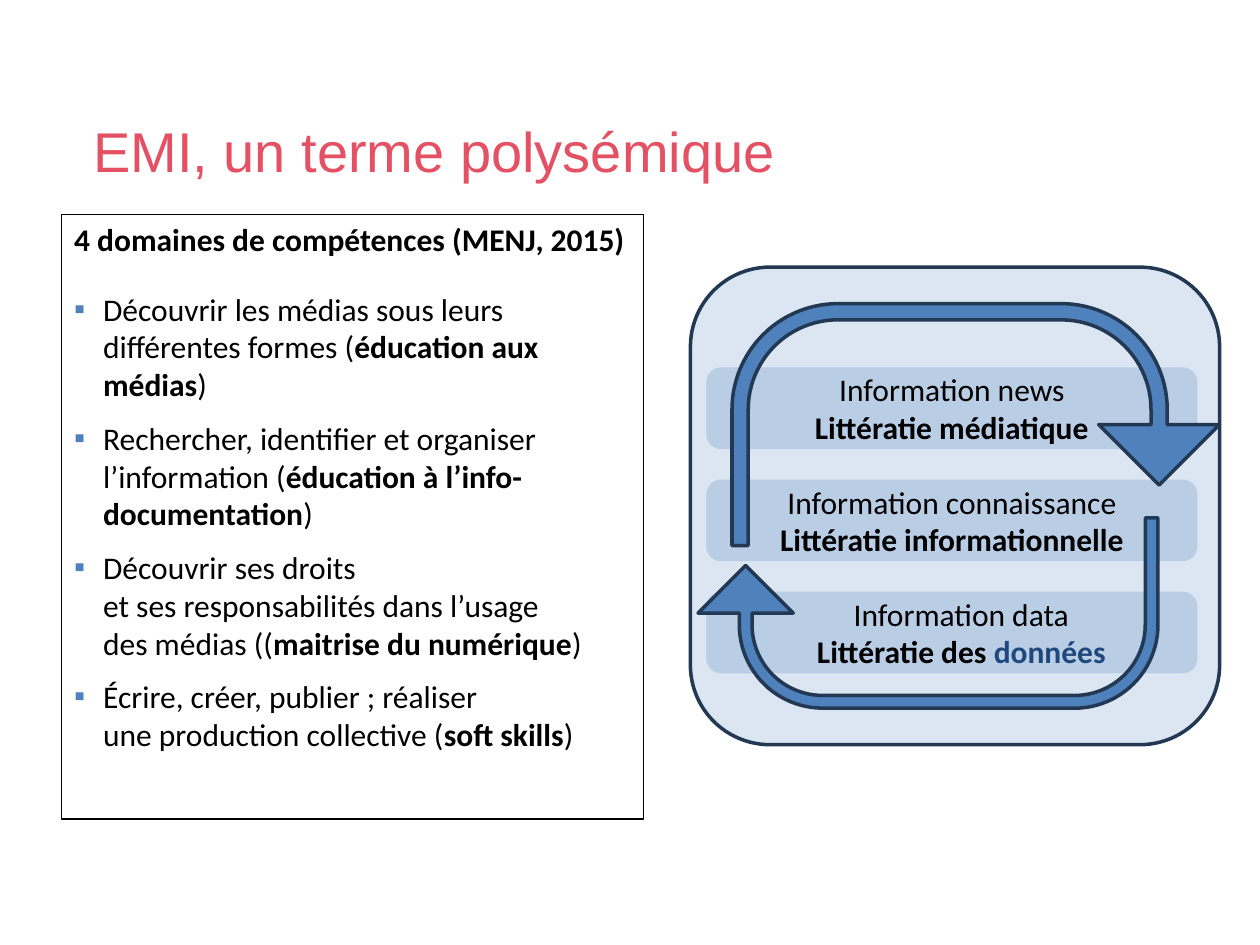
from dataclasses import dataclass

from lxml import etree
from pptx import Presentation
from pptx.dml.color import RGBColor
from pptx.enum import shapes, text
from pptx.oxml import ns
from pptx.util import Inches, Pt


@dataclass(frozen=True)
class Theme:
    title: str = "E45164"
    ink: str = "000000"
    paper: str = "FFFFFF"
    panel: str = "DCE6F2"
    band: str = "B9CDE5"
    accent: str = "4F81BD"
    outline: str = "233953"
    data: str = "1F497D"
    title_font: str = "Arial"
    body_font: str = "Calibri"
    title_size: int = 32
    body_size: int = 18


THEME = Theme()
SHAPE = shapes.MSO_SHAPE
ALIGN = text.PP_ALIGN
ANCHOR = text.MSO_ANCHOR

# A run is (text, bold) or (text, bold, colour); "\n" is a line break.
SKILLS = [
    [("Découvrir les médias sous leurs différentes formes (", False),
     ("éducation aux médias", True), (")", False)],
    [("Rechercher, identifier et organiser l’information (", False),
     ("éducation à l’info-documentation", True), (")", False)],
    [("Découvrir ses droits\net ses responsabilités dans l’usage\ndes médias ((", False),
     ("maitrise du numérique", True), (")", False)],
    [("Écrire, créer, publier ; réaliser\nune production collective (", False),
     ("soft skills", True), (")", False)],
]

# Each band: first line, runs of the second line, left indent
BANDS = [
    ("Information news", [("Littératie médiatique", True)], 0),
    ("Information connaissance", [("Littératie informationnelle", True)], 0),
    ("Information data",
     [("Littératie des ", True), ("données", True, THEME.data)], 0.15),
]


def add_box(slide, kind, left, top, width, height, fill, line, line_width):
    shape = slide.shapes.add_shape(
        kind, Inches(left), Inches(top), Inches(width), Inches(height))
    shape.shadow.inherit = False
    if fill:
        shape.fill.solid()
        shape.fill.fore_color.rgb = RGBColor.from_string(fill)
    else:
        shape.fill.background()
    shape.line.color.rgb = RGBColor.from_string(line)
    shape.line.width = Pt(line_width)
    return shape


def set_indent(paragraph, left, first=0):
    properties = paragraph._p.get_or_add_pPr()
    properties.set("marL", str(Inches(left)))
    properties.set("indent", str(Inches(first)))
    return properties


def add_bullet(paragraph):
    properties = set_indent(paragraph, 0.23, -0.23)
    colour = etree.SubElement(properties, ns.qn("a:buClr"))
    etree.SubElement(colour, ns.qn("a:srgbClr")).set("val", THEME.accent)
    etree.SubElement(properties, ns.qn("a:buFont")).set("typeface", "Arial")
    etree.SubElement(properties, ns.qn("a:buChar")).set("char", "▪")


def fill_paragraph(paragraph, runs, align=ALIGN.LEFT, font=THEME.body_font,
                   size=THEME.body_size, colour=THEME.ink):
    paragraph.alignment = align
    paragraph.font.name = font
    paragraph.font.size = Pt(size)
    paragraph.font.color.rgb = RGBColor.from_string(colour)
    for content, bold, *run_colour in runs:
        for index, line in enumerate(content.split("\n")):
            if index:
                paragraph.add_line_break()
            run = paragraph.add_run()
            run.text = line
            run.font.bold = bold
            if run_colour:
                run.font.color.rgb = RGBColor.from_string(run_colour[0])


def add_title(slide):
    shape = add_box(slide, SHAPE.RECTANGLE, 0.74, 0.82, 6.02, 0.75,
                    None, THEME.paper, 0.75)
    frame = shape.text_frame
    frame.word_wrap = True
    frame.vertical_anchor = ANCHOR.MIDDLE
    frame.margin_left = frame.margin_right = 0
    frame.margin_top = frame.margin_bottom = 0
    fill_paragraph(frame.paragraphs[0], [("EMI, un terme polysémique", False)],
                   font=THEME.title_font, size=THEME.title_size,
                   colour=THEME.title)


def add_skills(slide):
    shape = add_box(slide, SHAPE.RECTANGLE, 0.49, 1.7, 4.62, 4.8,
                    None, THEME.ink, 0.75)
    frame = shape.text_frame
    frame.word_wrap = True
    frame.vertical_anchor = ANCHOR.TOP
    heading = frame.paragraphs[0]
    heading.space_after = Pt(18)
    fill_paragraph(heading, [("4 domaines de compétences (MENJ, 2015)", True)])
    for runs in SKILLS:
        paragraph = frame.add_paragraph()
        paragraph.space_after = Pt(9)
        add_bullet(paragraph)
        fill_paragraph(paragraph, runs)


def add_band(slide, top, first_line, second_line, indent):
    shape = add_box(slide, SHAPE.ROUNDED_RECTANGLE, 5.62, top, 3.87, 0.62,
                    THEME.band, THEME.band, 2)
    frame = shape.text_frame
    frame.word_wrap = True
    frame.vertical_anchor = ANCHOR.MIDDLE
    for paragraph, runs in ((frame.paragraphs[0], [(first_line, False)]),
                            (frame.add_paragraph(), second_line)):
        set_indent(paragraph, indent)
        fill_paragraph(paragraph, runs, ALIGN.CENTER)


def add_turn_arrow(slide, left, top, width, height, rotation=0):
    shape = add_box(slide, SHAPE.U_TURN_ARROW, left, top, width, height,
                    THEME.accent, THEME.outline, 2)
    for index, value in enumerate((0.067, 0.25, 0.25, 0.438, 0.75)):
        shape.adjustments[index] = value
    shape.rotation = rotation


def main():
    presentation = Presentation()
    presentation.slide_width = Inches(10)
    presentation.slide_height = Inches(7.5)
    slide = presentation.slides.add_slide(presentation.slide_layouts[6])

    # Panel behind the cycle
    add_box(slide, SHAPE.ROUNDED_RECTANGLE, 5.48, 2.12, 4.2, 3.79,
            THEME.panel, THEME.outline, 2)

    # Title and list of skills
    add_title(slide)
    add_skills(slide)

    # Three literacies, evenly spaced
    for index, band in enumerate(BANDS):
        add_band(slide, 2.93 + 0.89 * index, *band)

    # Arrows that close the cycle
    add_turn_arrow(slide, 5.81, 2.41, 3.87, 1.92)
    add_turn_arrow(slide, 5.54, 4.11, 3.65, 1.51, rotation=180)

    presentation.save("out.pptx")


if __name__ == "__main__":
    main()
